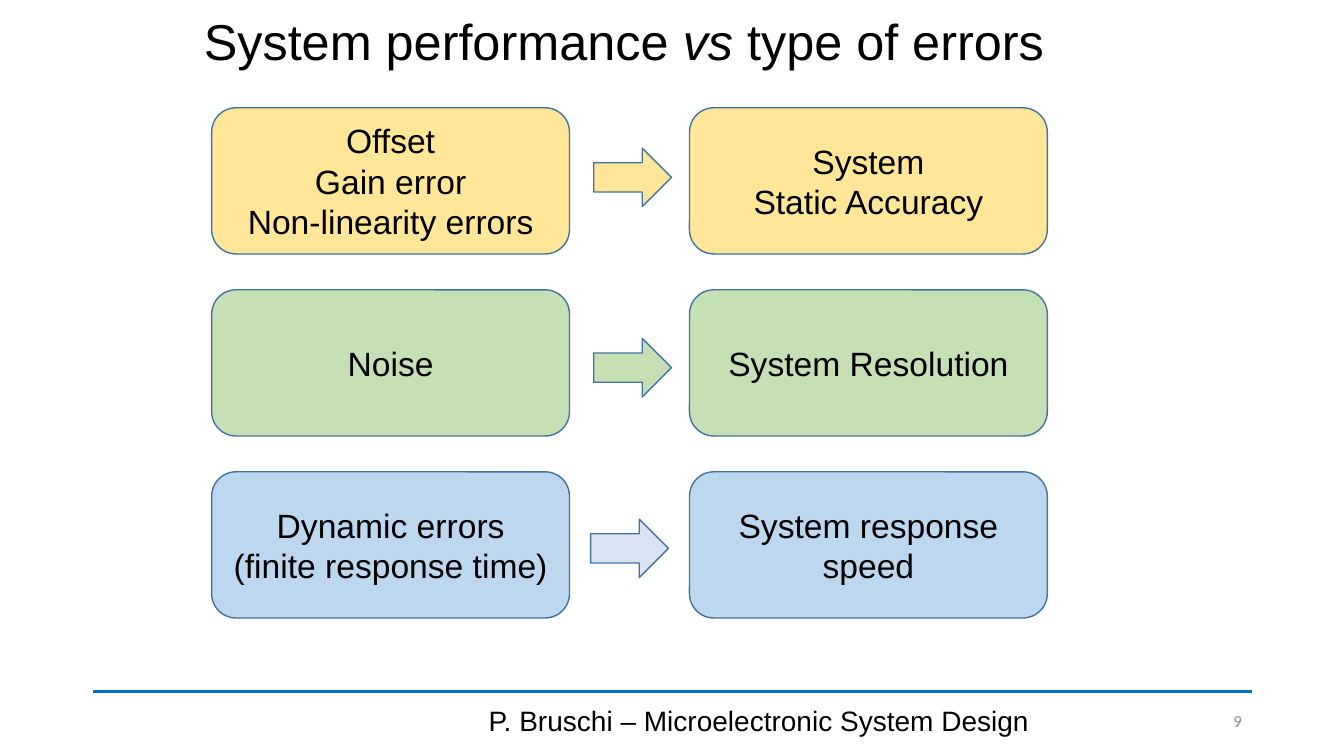
from dataclasses import dataclass

from lxml.etree import SubElement
from pptx import Presentation
from pptx.dml.color import RGBColor
from pptx.enum.shapes import MSO_CONNECTOR, MSO_SHAPE
from pptx.enum.text import MSO_ANCHOR, MSO_AUTO_SIZE, PP_ALIGN
from pptx.oxml.ns import qn
from pptx.util import Pt


@dataclass(frozen=True)
class Theme:
    text: RGBColor = RGBColor(0x00, 0x00, 0x00)
    muted: RGBColor = RGBColor(0x8C, 0x8C, 0x8C)
    outline: RGBColor = RGBColor(0x43, 0x73, 0x9E)
    rule: RGBColor = RGBColor(0x00, 0x70, 0xC0)
    yellow: RGBColor = RGBColor(0xFF, 0xE6, 0x99)
    green: RGBColor = RGBColor(0xC5, 0xE0, 0xB4)
    blue: RGBColor = RGBColor(0xBD, 0xD7, 0xEE)
    pale_blue: RGBColor = RGBColor(0xDA, 0xE3, 0xF3)
    body_font: str = "Arial"
    number_font: str = "Calibri"
    title_size: int = 36
    box_size: int = 24
    footer_size: int = 20
    number_size: int = 12


@dataclass(frozen=True)
class ErrorRow:
    errors: tuple
    effect: tuple
    fill: RGBColor
    arrow_fill: RGBColor
    arrow_left: float  # offset from the row's left edge
    arrow_top: float  # offset from the row's top edge


THEME = Theme()
ROWS = (
    ErrorRow(("Offset", "Gain error", "Non-linearity errors"), ("System", "Static Accuracy"),
             THEME.yellow, THEME.yellow, 272.9, 28.8),
    ErrorRow(("Noise",), ("System Resolution",),
             THEME.green, THEME.green, 272.9, 34.7),
    ErrorRow(("Dynamic errors", "(finite response time)"), ("System response speed",),
             THEME.blue, THEME.pale_blue, 270.7, 33.8),
)


def style_paragraph(paragraph, size, alignment=PP_ALIGN.CENTER,
                    font=THEME.body_font, color=THEME.text):
    paragraph.alignment = alignment
    paragraph.font.size = Pt(size)
    paragraph.font.name = font
    paragraph.font.color.rgb = color


def add_block(slide, preset, left, top, width, height, fill, lines=()):
    shape = slide.shapes.add_shape(preset, Pt(left), Pt(top), Pt(width), Pt(height))
    shape.shadow.inherit = False
    shape.fill.solid()
    shape.fill.fore_color.rgb = fill
    shape.line.color.rgb = THEME.outline
    shape.line.width = Pt(1)
    frame = shape.text_frame
    frame.vertical_anchor = MSO_ANCHOR.MIDDLE
    for index, line in enumerate(lines):
        paragraph = frame.add_paragraph() if index else frame.paragraphs[0]
        paragraph.text = line
        style_paragraph(paragraph, THEME.box_size)


def add_label(slide, text, left, top, width, height, size, **style):
    box = slide.shapes.add_textbox(Pt(left), Pt(top), Pt(width), Pt(height))
    box.text_frame.word_wrap = True
    box.text_frame.vertical_anchor = MSO_ANCHOR.MIDDLE
    paragraph = box.text_frame.paragraphs[0]
    paragraph.text = text
    style_paragraph(paragraph, size, **style)


def place_title(slide, left, top, width, height):
    title = slide.shapes.title
    title.left, title.top, title.width, title.height = Pt(left), Pt(top), Pt(width), Pt(height)
    frame = title.text_frame
    frame.auto_size = MSO_AUTO_SIZE.NONE
    frame.vertical_anchor = MSO_ANCHOR.MIDDLE
    paragraph = frame.paragraphs[0]
    for text, italic in (("System performance ", False), ("vs", True), (" type of errors", False)):
        run = paragraph.add_run()
        run.text = text
        run.font.italic = italic
    paragraph.line_spacing = 0.9
    style_paragraph(paragraph, THEME.title_size)


def draw_error_rows(slide, left, top, width, height):
    box_width, box_height = 255.6, 104.4
    pitch = (height - box_height) / (len(ROWS) - 1)
    for index, row in enumerate(ROWS):
        row_top = top + index * pitch
        for box_left, lines in ((left, row.errors), (left + width - box_width, row.effect)):
            add_block(slide, MSO_SHAPE.ROUNDED_RECTANGLE, box_left, row_top,
                      box_width, box_height, row.fill, lines)
        add_block(slide, MSO_SHAPE.RIGHT_ARROW, left + row.arrow_left, row_top + row.arrow_top,
                  55.6, 41.8, row.arrow_fill)


def draw_footer(slide, left, top, width, height):
    # Rule above the footer
    rule = slide.shapes.add_connector(MSO_CONNECTOR.STRAIGHT, Pt(left), Pt(top),
                                      Pt(left + width), Pt(top))
    rule.line.color.rgb = THEME.rule
    rule.line.width = Pt(2.75)
    SubElement(rule._element.spPr, qn("a:effectLst"))

    # Course name and page number
    label_height = 28.8
    label_top = top + height - label_height
    add_label(slide, "P. Bruschi – Microelectronic System Design", left + 252, label_top,
              447.8, label_height, THEME.footer_size)
    number_width = 69
    add_label(slide, "9", left + width - number_width, label_top, number_width, label_height,
              THEME.number_size, alignment=PP_ALIGN.RIGHT,
              font=THEME.number_font, color=THEME.muted)


def main():
    presentation = Presentation()
    presentation.slide_width, presentation.slide_height = Pt(960), Pt(540)
    slide = presentation.slides.add_slide(presentation.slide_layouts[5])
    place_title(slide, 31.7, 5.8, 828, 51.8)
    draw_error_rows(slide, 151.2, 77, 596.9, 364.4)
    draw_footer(slide, 66.2, 493.9, 828, 35.3)
    presentation.save("out.pptx")


if __name__ == "__main__":
    main()
